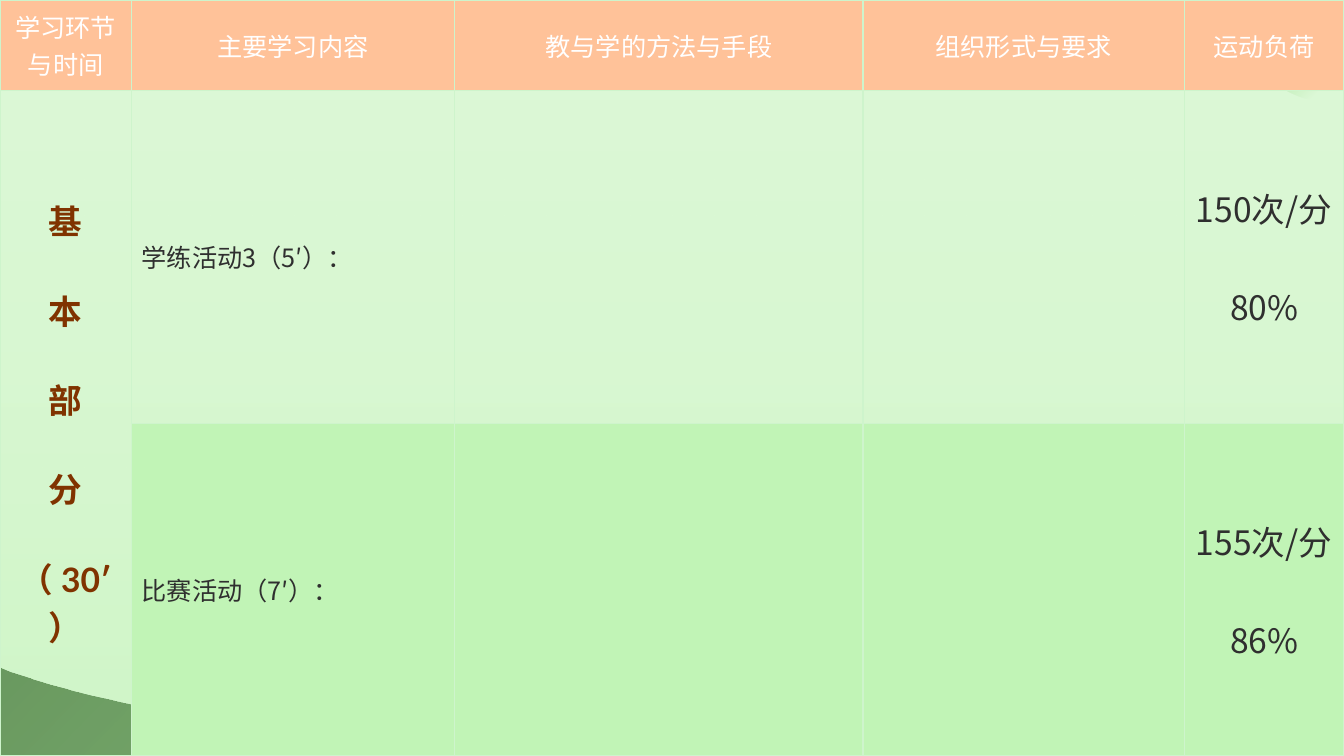
from dataclasses import dataclass

from lxml.etree import SubElement
from pptx import Presentation
from pptx.dml.color import RGBColor
from pptx.enum.shapes import MSO_SHAPE
from pptx.enum.text import MSO_ANCHOR, PP_ALIGN
from pptx.oxml import parse_xml
from pptx.oxml.ns import nsdecls, qn
from pptx.util import Pt

PX = 9525
WIDTH, HEIGHT = 1280, 720


@dataclass(frozen=True)
class Theme:
    latin: str = "Lato"
    cjk: str = "Noto Sans CJK SC"
    header_fill: str = "FFC299"
    header_text: str = "FFFFFF"
    body_fill: str = "C1F4B6"
    body_text: str = "2F2F2F"
    stage_text: str = "803300"
    border: str = "CEF4CC"
    pale: str = "E0F9DB"
    veil: str = "F9FEF8"
    deep: str = "133F0A"
    leaf: str = "237312"
    bright: str = "34AA1A"
    normal: int = 18
    large: int = 24
    stage_gap: int = 29
    load_gap: int = 35


THEME = Theme()
COLUMNS = [125, 308, 389, 306, 152]
ROWS = [86, 317, 317]
HEADERS = ["学习环节与时间", "主要学习内容", "教与学的方法与手段", "组织形式与要求", "运动负荷"]
STAGE = ["基", "本", "部", "分", "（ 30′ ）"]
ACTIVITIES = [
    ("学练活动3（5′）：", ["150次/分", "80%"], 50),
    ("比赛活动（7′）：", ["155次/分", "86%"], 100),
]


def set_gradient(fill, element, stops, angle):
    """Stops are (position %, colour, opacity %); the angle runs clockwise."""
    fill.gradient()
    fill.gradient_angle = 360 - angle
    stop_list = element.find(".//" + qn("a:gsLst"))
    for stop in list(stop_list):
        stop_list.remove(stop)
    for position, color, opacity in stops:
        stop = SubElement(stop_list, qn("a:gs"), pos=str(position * 1000))
        value = SubElement(stop, qn("a:srgbClr"), val=color)
        SubElement(value, qn("a:alpha"), val=str(opacity * 1000))


def finish_shape(shape, stops, angle):
    shape.shadow.inherit = False
    shape.line.fill.background()
    set_gradient(shape.fill, shape.element.spPr, stops, angle)


def curve(start, first, second, end, steps=32):
    """Points along a cubic curve, without its start."""
    points = []
    for step in range(1, steps + 1):
        t = step / steps
        weights = ((1 - t) ** 3, 3 * t * (1 - t) ** 2, 3 * t * t * (1 - t), t ** 3)
        corners = (start, first, second, end)
        points.append(tuple(sum(w * c[axis] for w, c in zip(weights, corners)) for axis in (0, 1)))
    return points


def add_outline(slide, points, stops, angle):
    scaled = [(round(x * PX), round(y * PX)) for x, y in points]
    builder = slide.shapes.build_freeform(*scaled[0], scale=1)
    builder.add_line_segments(scaled[1:], close=True)
    finish_shape(builder.convert_to_shape(), stops, angle)


def add_backdrop(slide):
    set_gradient(slide.background.fill, slide.element,
                 [(48, "FFFFFF", 100), (100, THEME.pale, 100)], 90)
    veil = slide.shapes.add_shape(MSO_SHAPE.RECTANGLE, 0, 0, WIDTH * PX, HEIGHT * PX)
    finish_shape(veil, [(0, THEME.veil, 80), (100, THEME.pale, 78)], 90)

    # Hill along the bottom edge
    hill = [(0, 636), (9, 640), *curve((9, 640), (412, 776), (835, 578), (1241, 669)),
            (WIDTH, 679), (WIDTH, HEIGHT), (0, HEIGHT)]
    add_outline(slide, hill, [(0, THEME.deep, 100), (100, THEME.leaf, 65)], 45)

    # Round spot in the top right corner
    spot = [(WIDTH, 0), (WIDTH, 95), (1273, 96),
            *curve((1273, 96), (1237, 99), (1203, 79), (1188, 44)),
            *curve((1188, 44), (1185, 33), (1183, 23), (1183, 12)), (1185, 0)]
    add_outline(slide, spot, [(0, THEME.leaf, 100), (41, THEME.bright, 47),
                              (82, THEME.bright, 0)], 45)


def style_cell(cell, color, opacity=100):
    cell.fill.solid()
    cell.fill.fore_color.rgb = RGBColor.from_string(color)
    cell.vertical_anchor = MSO_ANCHOR.MIDDLE
    properties = cell._tc.get_or_add_tcPr()
    if opacity < 100:
        value = properties.find(".//" + qn("a:srgbClr"))
        SubElement(value, qn("a:alpha"), val=str(opacity * 1000))
    for index, side in enumerate(("lnL", "lnR", "lnT", "lnB")):
        properties.insert(index, parse_xml(
            f'<a:{side} {nsdecls("a")} w="{Pt(1)}"><a:solidFill>'
            f'<a:srgbClr val="{THEME.border}"/></a:solidFill></a:{side}>'))


def write_cell(cell, lines, size, color, font, align=PP_ALIGN.CENTER, bold=False, gap=0):
    frame = cell.text_frame
    for index, line in enumerate(lines):
        paragraph = frame.add_paragraph() if index else frame.paragraphs[0]
        paragraph.alignment = align
        if index:
            paragraph.space_before = Pt(gap)
        run = paragraph.add_run()
        run.text = line
        run.font.size = Pt(size)
        run.font.bold = bold
        run.font.color.rgb = RGBColor.from_string(color)
        run.font.name = font
        SubElement(run._r.get_or_add_rPr(), qn("a:ea"), typeface=THEME.cjk)


def add_lesson_table(slide):
    frame = slide.shapes.add_table(len(ROWS), len(COLUMNS), 0, 0, WIDTH * PX, HEIGHT * PX)
    table = frame.table
    table.first_row = table.horz_banding = False
    for column, width in zip(table.columns, COLUMNS):
        column.width = width * PX
    for row, height in zip(table.rows, ROWS):
        row.height = height * PX

    # Header row
    for index, header in enumerate(HEADERS):
        cell = table.cell(0, index)
        style_cell(cell, THEME.header_fill)
        write_cell(cell, [header], THEME.normal, THEME.header_text, THEME.latin)

    # Activity rows
    for row, (activity, load, opacity) in enumerate(ACTIVITIES, start=1):
        for index in range(len(COLUMNS)):
            style_cell(table.cell(row, index), THEME.body_fill, opacity)
        content = table.cell(row, 1)
        content.margin_top = content.margin_bottom = 10 * PX
        content.margin_left = content.margin_right = 10 * PX
        write_cell(content, [activity], THEME.normal, THEME.body_text, THEME.cjk, PP_ALIGN.LEFT)
        write_cell(table.cell(row, len(COLUMNS) - 1), load, THEME.large, THEME.body_text,
                   THEME.cjk, gap=THEME.load_gap)

    # Stage name beside both activities
    stage = table.cell(1, 0)
    stage.merge(table.cell(2, 0))
    write_cell(stage, STAGE, THEME.large, THEME.stage_text, THEME.latin,
               bold=True, gap=THEME.stage_gap)


def main():
    presentation = Presentation()
    presentation.slide_width = WIDTH * PX
    presentation.slide_height = HEIGHT * PX
    slide = presentation.slides.add_slide(presentation.slide_layouts[6])
    add_backdrop(slide)
    add_lesson_table(slide)
    presentation.save("out.pptx")


if __name__ == "__main__":
    main()
